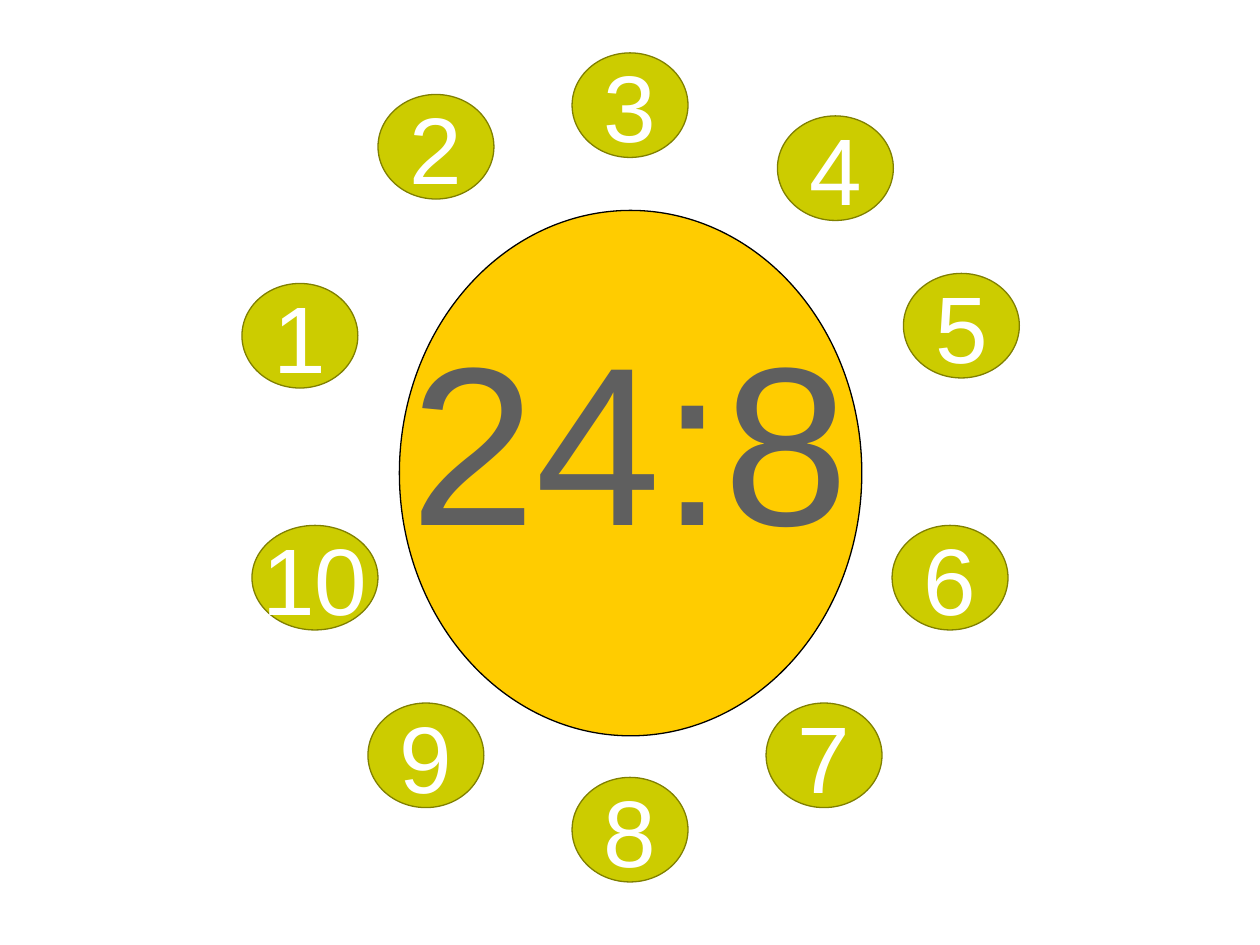
from pptx import Presentation
from pptx.dml.color import RGBColor
from pptx.enum import shapes, text
from pptx.util import Inches, Pt

NUMBER_SPOTS = [
    (1.92, 2.25), (3, 0.75), (4.54, 0.42), (6.17, 0.92), (7.17, 2.17),
    (7.08, 4.17), (6.08, 5.58), (4.54, 6.17), (2.92, 5.58), (2, 4.17),
]


def color(value):
    return RGBColor.from_string(value)


def write_centered(holder, wording, size, ink):
    frame = holder.text_frame
    frame.word_wrap = False
    frame.auto_size = text.MSO_AUTO_SIZE.NONE
    frame.vertical_anchor = text.MSO_ANCHOR.MIDDLE
    frame.text = wording
    paragraph = frame.paragraphs[0]
    paragraph.alignment = text.PP_ALIGN.CENTER
    paragraph.font.name = "Arial"
    paragraph.font.size = Pt(size)
    paragraph.font.color.rgb = color(ink)


def add_disc(slide, kind, left, top, width, height, fill, outline):
    disc = slide.shapes.add_shape(
        kind, Inches(left), Inches(top), Inches(width), Inches(height))
    disc.shadow.inherit = False
    disc.fill.solid()
    disc.fill.fore_color.rgb = color(fill)
    disc.line.color.rgb = color(outline)
    disc.line.width = Pt(0.75)
    return disc


def place_problem(slide):
    add_disc(slide, shapes.MSO_SHAPE.OVAL, 3.17, 1.67, 3.67, 4.17,
             "FFCC00", "000000")
    problem = slide.shapes.title
    problem.left, problem.top = Inches(2.5), Inches(1.58)
    problem.width, problem.height = Inches(5), Inches(3.75)
    write_centered(problem, "24:8", 129, "5F5F5F")
    slide.shapes._spTree.append(problem._element)


def add_number(slide, number, left, top):
    width = 1 if number == 10 else 0.92
    disc = add_disc(slide, shapes.MSO_SHAPE.FLOWCHART_CONNECTOR,
                    left, top, width, 0.83, "CCCC00", "808000")
    write_centered(disc, str(number), 54, "FFFFFF")


def main():
    deck = Presentation()
    deck.slide_width, deck.slide_height = Inches(10), Inches(7.5)
    slide = deck.slides.add_slide(deck.slide_layouts[5])
    place_problem(slide)
    for number, (left, top) in enumerate(NUMBER_SPOTS, start=1):
        add_number(slide, number, left, top)
    deck.save("out.pptx")


if __name__ == "__main__":
    main()
